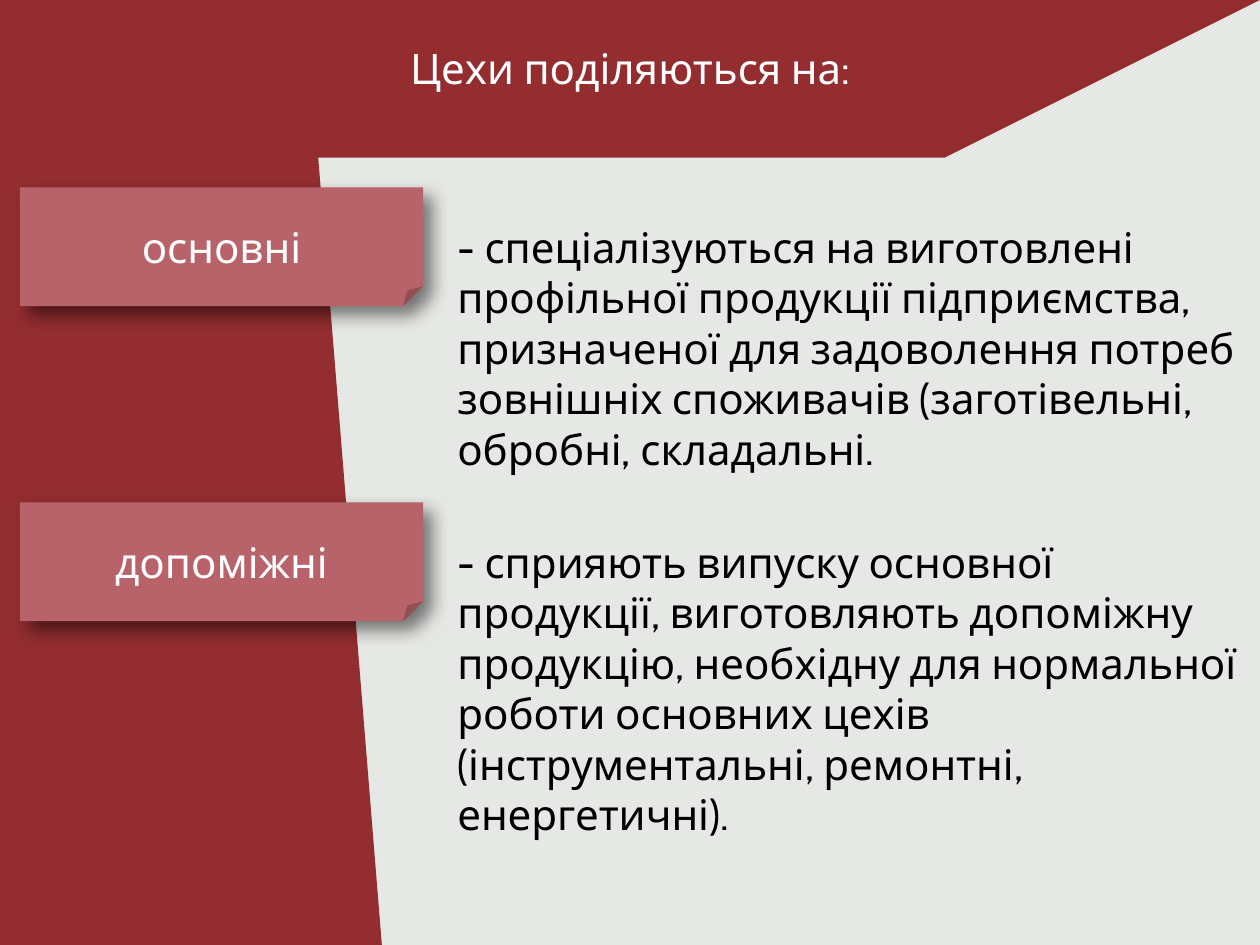
import pptx
import pptx.dml.color
import pptx.enum.shapes
import pptx.enum.text
import pptx.oxml
import pptx.oxml.ns
import pptx.util

Cm = pptx.util.Cm
MSO_SHAPE = pptx.enum.shapes.MSO_SHAPE
ALIGN = pptx.enum.text.PP_ALIGN
ANCHOR = pptx.enum.text.MSO_ANCHOR

SHADOW = (
    f'<a:effectLst {pptx.oxml.ns.nsdecls("a")}>'
    '<a:outerShdw blurRad="127000" dist="90000" dir="2700000" algn="tl" rotWithShape="0">'
    '<a:srgbClr val="000000"><a:alpha val="50000"/></a:srgbClr>'
    '</a:outerShdw></a:effectLst>'
)


def color(value):
    return pptx.dml.color.RGBColor.from_string(value)


class Deck:
    font = "Cabin"
    size = 24
    paper, band, card = "E6E8E5", "932D30", "B76369"
    light, dark = "FFFFFF", "000000"

    def __init__(self, prs):
        self.slide = prs.slides.add_slide(prs.slide_layouts[5])
        fill = self.slide.background.fill
        fill.solid()
        fill.fore_color.rgb = color(self.paper)

    def shape(self, kind, box, fill, flips=(), rotation=0, shadow=False):
        sp = self.slide.shapes.add_shape(kind, *map(Cm, box))
        sp.fill.solid()
        sp.fill.fore_color.rgb = color(fill)
        sp.line.fill.background()
        sp.rotation = rotation
        for flip in flips:
            sp._element.spPr.find(pptx.oxml.ns.qn("a:xfrm")).set(flip, "1")
        if shadow:
            sp._element.spPr.append(pptx.oxml.parse_xml(SHADOW))
        else:
            sp.shadow.inherit = False
        return sp

    def fill_text(self, sp, text, ink, align, anchor):
        tf = sp.text_frame
        tf.text = text
        tf.word_wrap = True
        tf.auto_size = pptx.enum.text.MSO_AUTO_SIZE.NONE
        tf.vertical_anchor = anchor
        p = tf.paragraphs[0]
        p.alignment = align
        for r in p.runs:
            r.font.name = self.font
            r.font.size = pptx.util.Pt(self.size)
            r.font.color.rgb = color(ink)
        return p

    def text(self, box, text, ink, align=ALIGN.LEFT, anchor=ANCHOR.TOP):
        sp = self.slide.shapes.add_textbox(*map(Cm, box))
        self.fill_text(sp, text, ink, align, anchor)

    def title(self, box, text):
        sp = self.slide.shapes.title
        sp.left, sp.top, sp.width, sp.height = map(Cm, box)
        p = self.fill_text(sp, text, self.light, ALIGN.CENTER, ANCHOR.MIDDLE)
        p.line_spacing = pptx.util.Pt(15.9)
        # Bring the title in front of the bands
        sp._element.getparent().append(sp._element)

    def label(self, box, text):
        self.shape(MSO_SHAPE.FOLDED_CORNER, box, self.card, shadow=True)
        self.text(box, text, self.light, ALIGN.CENTER, ANCHOR.MIDDLE)


def main():
    width, height, head = 25.4, 19.05, 3.18
    prs = pptx.Presentation()
    prs.slide_width, prs.slide_height = Cm(width), Cm(height)
    deck = Deck(prs)

    # Top band and slanted side band
    top = deck.shape(MSO_SHAPE.TRAPEZOID, (0, 0, width, head), deck.band, ["flipV"])
    top.adjustments[0] = 2
    side = 7.7
    shift = (height - side) / 2
    deck.shape(MSO_SHAPE.FLOWCHART_MANUAL_INPUT, (-shift, shift, height, side),
               deck.band, ["flipH", "flipV"], rotation=270)
    deck.title((0, 0, width, head), "Цехи поділяються на:")

    # Kinds of workshop: label and description
    kinds = [
        ("основні", 5.18,
         "- спеціалізуються на виготовлені профільної продукції підприємства, "
         "призначеної для задоволення потреб зовнішніх споживачів "
         "(заготівельні, обробні, складальні."),
        ("допоміжні", 6.45,
         "- сприяють випуску основної продукції, виготовляють допоміжну "
         "продукцію, необхідну для нормальної роботи основних цехів "
         "(інструментальні, ремонтні, енергетичні)."),
    ]
    for i, (name, text_height, description) in enumerate(kinds):
        y = 3.78 + i * 6.35
        deck.label((0.4, y, 8.13, 2.39), name)
        deck.text((8.97, y + 0.56, width - 8.97, text_height), description, deck.dark)

    prs.save("out.pptx")


if __name__ == "__main__":
    main()
